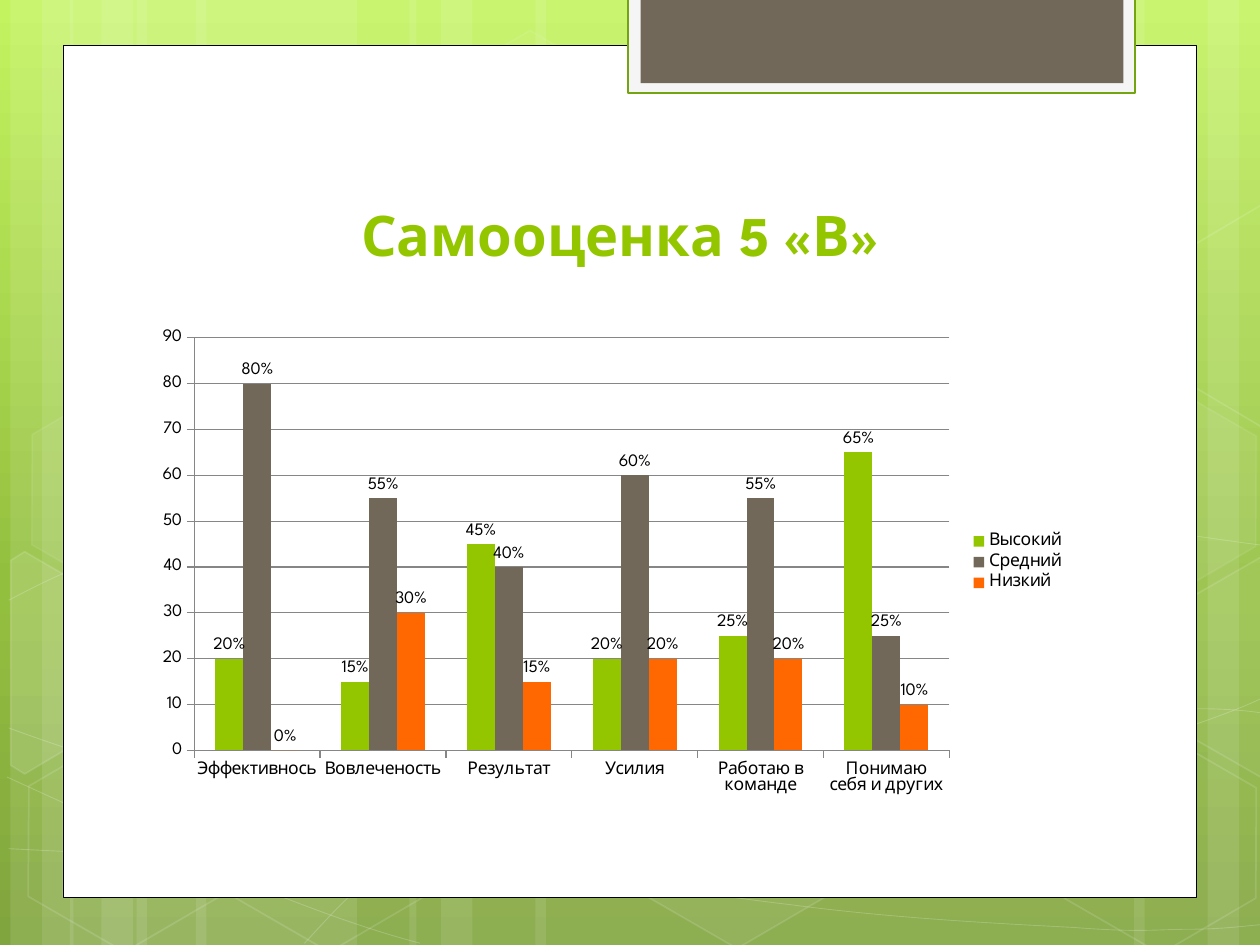
from copy import deepcopy
from math import cos, radians, sin
from typing import NamedTuple, Optional

from lxml import etree
from pptx import Presentation
from pptx.chart.data import CategoryChartData
from pptx.dml.color import RGBColor
from pptx.enum.chart import XL_CHART_TYPE, XL_LABEL_POSITION, XL_LEGEND_POSITION, XL_TICK_MARK
from pptx.enum.shapes import MSO_SHAPE
from pptx.enum.text import MSO_ANCHOR, PP_ALIGN
from pptx.oxml.ns import qn
from pptx.util import Pt

COLUMNS = XL_CHART_TYPE.COLUMN_CLUSTERED
LABEL_OUTSIDE = XL_LABEL_POSITION.OUTSIDE_END
LEGEND_RIGHT = XL_LEGEND_POSITION.RIGHT
TICK_OUT = XL_TICK_MARK.OUTSIDE
RECT, HEXAGON = MSO_SHAPE.RECTANGLE, MSO_SHAPE.HEXAGON
BOTTOM, CENTER = MSO_ANCHOR.BOTTOM, PP_ALIGN.CENTER

FONT = "League Spartan"
TILT = 30
COLORS = {
    "sky": "C3F35F", "meadow": "93BF3F", "moss": "81A53E",
    "white": "FFFFFF", "black": "000000", "tab": "F5F5F5", "tab_edge": "74A510",
    "green": "94C600", "brown": "71685A", "orange": "FF6700", "grid": "868686",
}


class Style(NamedTuple):
    """Fill and line colours, with opacity in percent."""
    fill: Optional[str] = None
    fill_alpha: int = 100
    line: Optional[str] = None
    width: float = 1
    line_alpha: int = 100


class Box(NamedTuple):
    x: float
    y: float
    w: float
    h: float
    style: Style
    rotation: int = 0


class Hexagon(NamedTuple):
    x: float
    y: float
    fill_alpha: int
    line_alpha: int


class CutHexagon(NamedTuple):
    """Corners as they appear, and the centre they are tilted around."""
    center: tuple
    corners: list
    fill_alpha: int


class Curve(NamedTuple):
    """A start point, then three points per cubic segment; one segment may be straight."""
    points: list
    straight: Optional[int] = None


class Level(NamedTuple):
    name: str
    color: str
    values: tuple


BAND = Style("white", 10)
CURVE = Style(line="white", width=0.5, line_alpha=20)
BANDS = [(78, 126, 0), (6, 36, 0), (24, 60, 0), (112, 126, 0), (40, 36, 0), (58, 60, 0),
         (528, 126, 180), (690, 36, 180), (648, 60, 180),
         (306, 222, 0), (234, 36, 0), (252, 60, 0)]
CURVES = [
    Curve([(5, 485), (44, 487), (83, 489), (137, 488), (191, 487), (258, 486), (330, 479),
           (402, 472), (504, 458), (570, 444), (636, 431), (703, 409), (725, 397)]),
    Curve([(5, 343), (26, 332), (47, 321), (87, 310), (128, 300), (186, 284), (250, 279),
           (314, 274), (392, 273), (471, 279), (550, 285), (682, 307), (725, 312)]),
    Curve([(4, 444), (91, 484), (178, 523), (240, 539)]),
    Curve([(5, 416), (27, 424), (50, 432), (92, 444), (134, 454), (197, 472), (257, 485),
           (317, 497), (392, 510), (452, 517), (512, 525), (576, 528), (614, 530),
           (652, 533), (662, 531), (680, 531), (699, 531), (712, 529), (725, 528)]),
    Curve([(174, 539), (187, 525), (200, 510), (217, 498), (235, 485), (259, 470), (279, 460),
           (300, 450), (312, 446), (338, 438), (364, 431), (413, 421), (438, 416),
           (464, 411), (467, 411), (490, 410), (512, 408), (547, 405), (572, 405),
           (597, 404), (638, 405), (638, 405), (686, 405),
           (699, 405), (711, 406), (718, 407), (724, 408), (722, 407), (724, 408)], 7),
]
HEXAGONS = [
    Hexagon(240, 26, 4, 8), Hexagon(358, 424, 6, 12), Hexagon(8, 426, 0, 12),
    Hexagon(10, 225, 7, 8), Hexagon(125, 426, 0, 12), Hexagon(542, 326, 10, 12),
    Hexagon(600, 427, 0, 12), Hexagon(600, 226, 7, 8),
]
CUT_HEXAGONS = [
    CutHexagon((26, 385), [(6, 320), (14, 315), (69, 347), (68, 410), (14, 442), (6, 437)], 10),
    CutHexagon((709, 374.5), [(667, 349), (721, 318), (726, 321), (726, 441), (721, 444),
                              (667, 413)], 4),
    CutHexagon((709, 173.5), [(667, 149), (721, 117), (727, 121), (726, 241), (721, 244),
                              (667, 212)], 0),
]
PANELS = [
    Box(36, 26, 648, 487, Style("white", line="black", width=0.5)),
    Box(359, -1.5, 289.5, 54.5, Style("tab", line="tab_edge", width=1.25)),
    Box(366, -1.5, 276, 49, Style("brown")),
]
CATEGORIES = ["Эффективнось", "Вовлеченость", "Результат", "Усилия",
              "Работаю в команде", "Понимаю себя и других"]
LEVELS = [
    Level("Высокий", "green", (20, 15, 45, 20, 25, 65)),
    Level("Средний", "brown", (80, 55, 40, 60, 55, 25)),
    Level("Низкий", "orange", (0, 30, 15, 20, 20, 10)),
]


def rgb(name: str) -> RGBColor:
    return RGBColor.from_string(COLORS[name])


def set_alpha(parent, percent: int) -> None:
    if percent < 100:
        color = parent.find(qn("a:solidFill"))[0]
        etree.SubElement(color, qn("a:alpha")).set("val", str(percent * 1000))


def paint(sp, style: Style) -> None:
    sp.shadow.inherit = False
    if style.fill and style.fill_alpha:
        sp.fill.solid()
        sp.fill.fore_color.rgb = rgb(style.fill)
        set_alpha(sp.element.spPr, style.fill_alpha)
    else:
        sp.fill.background()
    if style.line:
        sp.line.color.rgb = rgb(style.line)
        sp.line.width = Pt(style.width)
        set_alpha(sp.element.spPr.find(qn("a:ln")), style.line_alpha)
    else:
        sp.line.fill.background()


def add_box(s, box: Box, shape=RECT):
    sp = s.shapes.add_shape(shape, Pt(box.x), Pt(box.y), Pt(box.w), Pt(box.h))
    sp.rotation = box.rotation
    paint(sp, box.style)
    return sp


def add_hexagon(s, hexagon: Hexagon) -> None:
    style = Style("white", hexagon.fill_alpha, "white", 1, hexagon.line_alpha)
    sp = add_box(s, Box(hexagon.x, hexagon.y, 126, 109.5, style, TILT), HEXAGON)
    sp.adjustments[0] = 0.285


def add_outline(s, points: list, style: Style, close: bool):
    (x, y), *rest = [(Pt(px), Pt(py)) for px, py in points]
    builder = s.shapes.build_freeform(x, y)
    builder.add_line_segments(rest, close=close)
    sp = builder.convert_to_shape()
    paint(sp, style)
    return sp


def add_cut_hexagon(s, cut: CutHexagon) -> None:
    cx, cy = cut.center
    c, d = cos(radians(TILT)), sin(radians(TILT))
    upright = [(cx + (x - cx) * c + (y - cy) * d, cy - (x - cx) * d + (y - cy) * c)
               for x, y in cut.corners]
    style = Style("white", cut.fill_alpha, "white", 1, 12)
    add_outline(s, upright, style, close=True).rotation = TILT


def add_curve(s, curve: Curve) -> None:
    """Draw the control polygon, then join each three of its lines into a cubic segment."""
    sp = add_outline(s, curve.points, CURVE, close=False)
    lines = sp.element.findall(".//" + qn("a:lnTo"))
    segment = 0
    while lines:
        if segment == curve.straight:
            lines.pop(0)
        else:
            triple, lines = lines[:3], lines[3:]
            cubic = etree.Element(qn("a:cubicBezTo"))
            triple[0].addprevious(cubic)
            for line in triple:
                cubic.append(line[0])
                line.getparent().remove(line)
        segment += 1


def fill_background(s) -> None:
    fill = s.background.fill
    fill.gradient()
    fill.gradient_angle = 270
    stops = s.element.find(".//" + qn("a:gsLst"))
    stops.insert(1, deepcopy(stops[0]))
    colors = ("sky", "meadow", "moss")
    for stop, color, position in zip(fill.gradient_stops, colors, (0, 0.62, 1)):
        stop.color.rgb = rgb(color)
        stop.position = position


def set_title(s, text: str) -> None:
    title = s.shapes.title
    title.left, title.top, title.width, title.height = Pt(82), Pt(81), Pt(544.5), Pt(75.5)
    tf = title.text_frame
    tf.text = text
    tf.vertical_anchor = BOTTOM
    p = tf.paragraphs[0]
    p.alignment = CENTER
    font = p.runs[0].font
    font.name, font.size, font.bold = FONT, Pt(32), True
    font.color.rgb = rgb("green")
    title.element.getparent().append(title.element)  # bring in front of the panels


def add_level_chart(s) -> None:
    data = CategoryChartData()
    data.categories = CATEGORIES
    for level in LEVELS:
        data.add_series(level.name, level.values)
    chart = s.shapes.add_chart(COLUMNS, Pt(82.25), Pt(183), Pt(533.5), Pt(276.5), data).chart
    chart.has_title = False
    chart.font.name, chart.font.size = FONT, Pt(10)
    chart.font.color.rgb = rgb("black")
    chart.has_legend = True
    chart.legend.position = LEGEND_RIGHT
    chart.legend.include_in_layout = False
    chart.value_axis.major_gridlines.format.line.color.rgb = rgb("grid")
    for axis in (chart.category_axis, chart.value_axis):
        axis.major_tick_mark = TICK_OUT
        axis.format.line.color.rgb = rgb("grid")

    plot = chart.plots[0]
    plot.gap_width, plot.overlap, plot.vary_by_categories = 150, 0, False
    for series, level in zip(plot.series, LEVELS):
        series.format.fill.solid()
        series.format.fill.fore_color.rgb = rgb(level.color)
        labels = series.data_labels
        labels.show_value = True
        labels.position = LABEL_OUTSIDE
        labels.number_format, labels.number_format_is_linked = '0"%"', False
        labels.font.name, labels.font.size = FONT, Pt(10)


def main() -> None:
    prs = Presentation()
    prs.slide_width, prs.slide_height = Pt(720), Pt(540)
    s = prs.slides.add_slide(prs.slide_layouts[5])
    fill_background(s)
    for x, width, rotation in BANDS:
        add_box(s, Box(x, 0, width, 540, BAND, rotation))
    for curve in CURVES:
        add_curve(s, curve)
    for hexagon in HEXAGONS:
        add_hexagon(s, hexagon)
    for cut in CUT_HEXAGONS:
        add_cut_hexagon(s, cut)
    for panel in PANELS:
        add_box(s, panel)
    set_title(s, "Самооценка 5 «В»")
    add_level_chart(s)
    prs.save("out.pptx")


if __name__ == "__main__":
    main()
